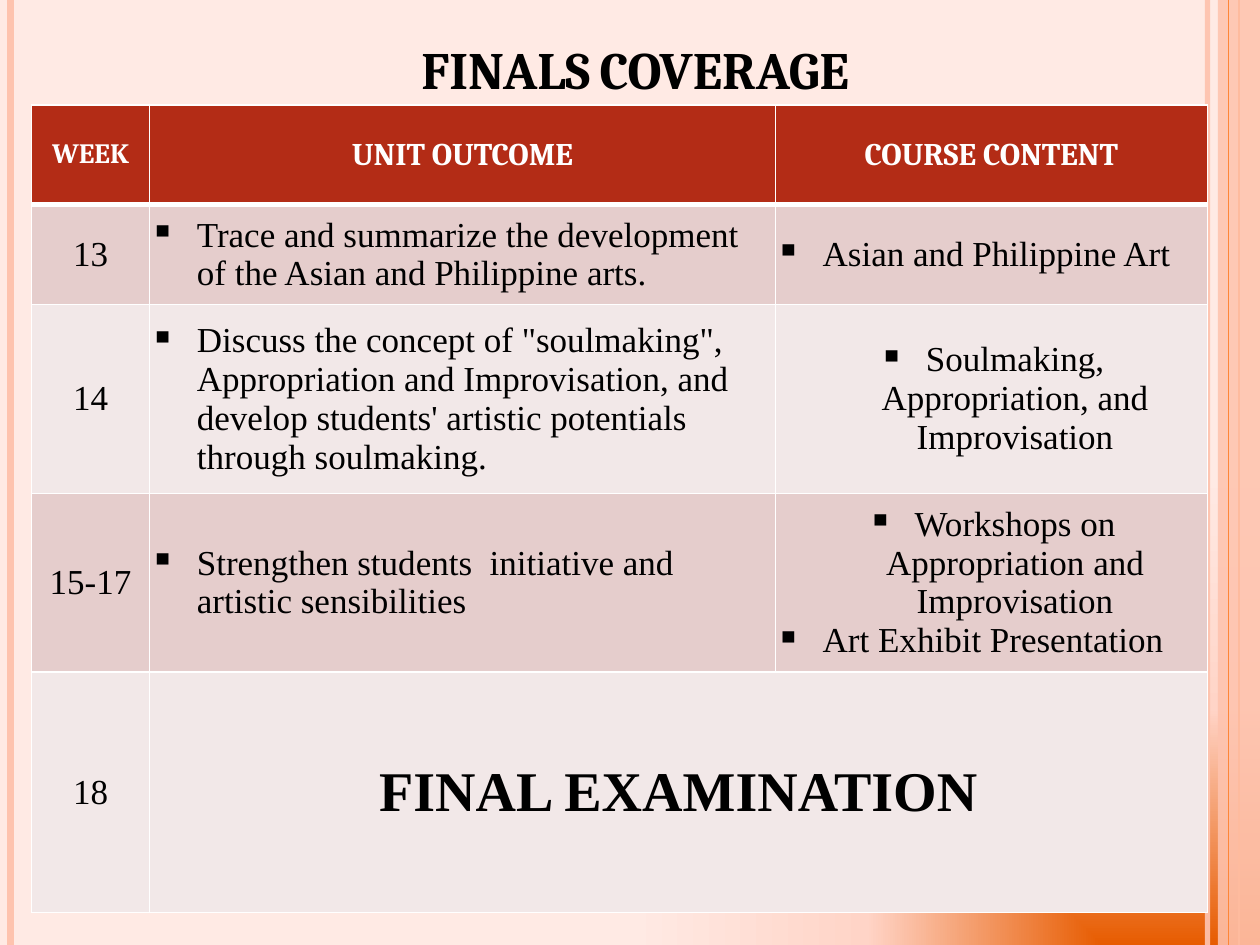
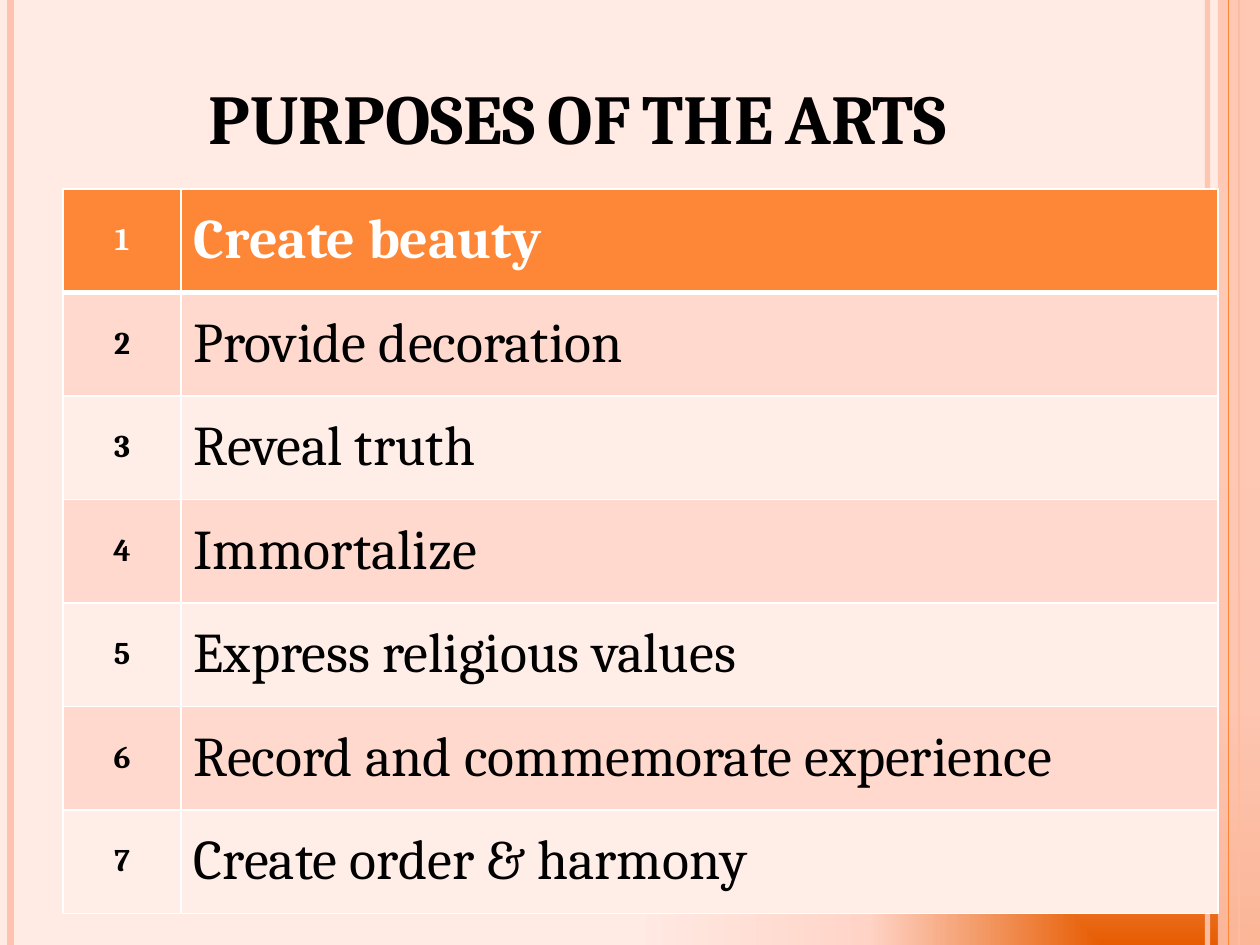
from dataclasses import dataclass

import lxml.etree
import pptx
import pptx.dml.color
import pptx.enum.shapes
import pptx.enum.text
import pptx.oxml
import pptx.oxml.ns
import pptx.util

WIDE, HIGH = pptx.util.Inches(10), pptx.util.Inches(7.5)
COLS, ROWS = 120, 90
PEACH, ORANGE, BRICK = "FEC3AE", "FE8637", "B32C16"
WHITE, BLACK = "FFFFFF", "000000"
HEAD, BODY = "Cambria", "Times New Roman"
GLOW = ((0, "E75C01"), (50, "FFD4C7"), (100, "FFEAE4"))
MID = pptx.enum.text.PP_ALIGN.CENTER
LEFT = pptx.enum.text.PP_ALIGN.LEFT


@dataclass(frozen=True)
class Box:
    col: float
    row: float
    wide: float
    high: float

    def place(self) -> tuple[int, int, int, int]:
        return across(self.col), down(self.row), across(self.wide), down(self.high)


@dataclass(frozen=True)
class Stripe:
    col: float
    hue: str
    weight: float
    alpha: int = 100


@dataclass(frozen=True)
class Line:
    text: str
    size: float
    font: str = HEAD
    hue: str = BLACK
    bold: bool = False
    align: int = MID
    mark: bool = False


@dataclass(frozen=True)
class Cell:
    lines: tuple[Line, ...]
    fill: str
    inset: bool = True
    span: int = 1


@dataclass(frozen=True)
class Grid:
    box: Box
    cols: tuple[float, ...]
    rows: tuple[float, ...]
    cells: list[list[Cell]]


BACK = (Stripe(115, PEACH, 3, 93), Stripe(1, PEACH, 4.5), Stripe(118, ORANGE, 1.5))
FRONT = (Stripe(117, ORANGE, 0.75),)
BAND = Box(116, 0, 4, ROWS)


def across(cols: float) -> int:
    return round(WIDE * cols / COLS)


def down(rows: float) -> int:
    return round(HIGH * rows / ROWS)


def paint(hue: str) -> pptx.dml.color.RGBColor:
    return pptx.dml.color.RGBColor.from_string(hue)


def add(root, tag: str, **attrs):
    node = lxml.etree.SubElement(root, pptx.oxml.ns.qn(tag))
    for name, value in attrs.items():
        node.set(name, str(value))
    return node


def fade(shape, alpha: int) -> None:
    if alpha < 100:
        hue = next(shape._element.spPr.iter(pptx.oxml.ns.qn("a:srgbClr")))
        add(hue, "a:alpha", val=alpha * 1000)


def glow(slide) -> None:
    fill = slide.background.fill
    fill.solid()
    old = next(slide._element.iter(pptx.oxml.ns.qn("a:solidFill")))
    root = old.getparent()
    grad = add(root, "a:gradFill", rotWithShape=1)
    root.replace(old, grad)
    stops = add(grad, "a:gsLst")
    for share, hue in GLOW:
        add(add(stops, "a:gs", pos=share * 1000), "a:srgbClr", val=hue)
    add(add(grad, "a:path", path="rect"), "a:fillToRect", l=100000, t=100000)


def rule(slide, stripe: Stripe) -> None:
    edge = across(stripe.col)
    line = slide.shapes.add_connector(
        pptx.enum.shapes.MSO_CONNECTOR.STRAIGHT, edge, 0, edge, HIGH)
    line.line.color.rgb = paint(stripe.hue)
    line.line.width = pptx.util.Pt(stripe.weight)
    fade(line, stripe.alpha)
    add(line._element.spPr, "a:effectLst")


def frame(slide) -> None:
    glow(slide)
    for stripe in BACK:
        rule(slide, stripe)
    band = slide.shapes.add_shape(
        pptx.enum.shapes.MSO_SHAPE.RECTANGLE, *BAND.place())
    band.shadow.inherit = False
    band.fill.solid()
    band.fill.fore_color.rgb = paint(PEACH)
    band.line.fill.background()
    fade(band, 87)
    for stripe in FRONT:
        rule(slide, stripe)


def write(para, line: Line) -> None:
    para.text = line.text
    para.alignment = line.align
    para.font.name = line.font
    para.font.size = pptx.util.Pt(line.size)
    para.font.bold = line.bold
    para.font.color.rgb = paint(line.hue)
    if line.mark:
        props = para._p.get_or_add_pPr()
        dent = across(4.5)
        props.set("marL", str(dent))
        props.set("indent", str(-dent))
        bullet = pptx.oxml.parse_xml(
            f'<a:buChar {pptx.oxml.ns.nsdecls("a")} char="▪"/>')
        props.find(pptx.oxml.ns.qn("a:defRPr")).addprevious(bullet)


def title(slide, text: str, size: float, box: Box) -> None:
    frame = slide.shapes.add_textbox(*box.place()).text_frame
    frame.word_wrap = True
    frame.vertical_anchor = pptx.enum.text.MSO_ANCHOR.MIDDLE
    para = frame.paragraphs[0]
    write(para, Line(text, size, bold=True))
    para.runs[0]._r.get_or_add_rPr().set("cap", "small")


def edge(cell, top: float, base: float) -> None:
    props = cell._tc.get_or_add_tcPr()
    for side, weight in zip("LRTB", (1, 1, top, base)):
        line = add(props, f"a:ln{side}", w=pptx.util.Pt(weight))
        add(add(line, "a:solidFill"), "a:srgbClr", val=WHITE)


def fill(cell, data: Cell) -> None:
    cell.fill.solid()
    cell.fill.fore_color.rgb = paint(data.fill)
    cell.vertical_anchor = pptx.enum.text.MSO_ANCHOR.MIDDLE
    if not data.inset:
        cell.margin_left = cell.margin_right = 0
        cell.margin_top = cell.margin_bottom = 0
    text = cell.text_frame
    for spot, line in enumerate(data.lines):
        write(text.add_paragraph() if spot else text.paragraphs[0], line)


def chart(slide, grid: Grid) -> None:
    table = slide.shapes.add_table(
        len(grid.rows), len(grid.cols), *grid.box.place()).table
    table.first_row = table.horz_banding = False
    for col, wide in zip(table.columns, grid.cols):
        col.width = across(wide)
    for row, high in zip(table.rows, grid.rows):
        row.height = down(high)
    for r, row in enumerate(grid.cells):
        for c in range(len(grid.cols)):
            edge(table.cell(r, c), 3 if r == 1 else 1, 3 if r == 0 else 1)
        for c, data in enumerate(row):
            cell = table.cell(r, c)
            if data.span > 1:
                cell.merge(table.cell(r, c + data.span - 1))
            fill(cell, data)


def plan() -> Grid:
    def week(text: str) -> Line:
        return Line(text, 20, BODY)

    def point(text: str, align: int = LEFT) -> Line:
        return Line(text, 20, BODY, align=align, mark=True)

    heads = (("WEEK", 16), ("UNIT OUTCOME", 18), ("COURSE CONTENT", 18))
    cells = [[Cell((Line(text, size, hue=WHITE, bold=True),), BRICK)
              for text, size in heads]]
    weeks = (
        ("13", "Trace and summarize the development of the Asian and Philippine arts.",
         (point("Asian and Philippine Art"),)),
        ("14", "Discuss the concept of \"soulmaking\", Appropriation and Improvisation, "
         "and develop students' artistic potentials through soulmaking.",
         (point("Soulmaking, Appropriation, and Improvisation", MID),)),
        ("15-17", "Strengthen students  initiative and artistic sensibilities",
         (point("Workshops on Appropriation and Improvisation", MID),
          point("Art Exhibit Presentation"))),
    )
    tints = ("E5CDCC", "F2E8E8")
    for spot, (name, goal, topics) in enumerate(weeks):
        cells.append([Cell(lines, tints[spot % 2], False)
                      for lines in ((week(name),), (point(goal),), topics)])
    exam = Line("FINAL EXAMINATION", 32, BODY, bold=True)
    cells.append([Cell((week("18"),), tints[1], False),
                  Cell((exam,), tints[1], False, 2)])
    return Grid(Box(3, 10, 112, 76.9), (11.25, 59.6, 41.15),
                (9.5, 9.5, 18, 17, 22.9), cells)


def aims() -> Grid:
    names = ("Create beauty", "Provide decoration", "Reveal truth", "Immortalize",
             "Express religious values", "Record and commemorate experience",
             "Create order & harmony")
    tints = ("FFEDE8", "FFD9CE")
    cells = []
    for spot, name in enumerate(names):
        top = spot == 0
        tint, hue = (ORANGE, WHITE) if top else (tints[spot % 2], BLACK)
        cells.append([
            Cell((Line(str(spot + 1), 18, hue=hue, bold=True),), tint),
            Cell((Line(name, 32, hue=hue, bold=top, align=LEFT),), tint)])
    box = Box(6, 18, 110, 69)
    return Grid(box, (11.25, 98.75), (box.high / len(names),) * len(names), cells)


def main() -> None:
    deck = pptx.Presentation()
    deck.slide_width, deck.slide_height = WIDE, HIGH
    pages = (
        ("FINALS COVERAGE", 30, Box(6, 2, 109, 9), plan()),
        ("PURPOSES OF THE ARTS", 40, Box(6, 3.6, 98, 15), aims()),
    )
    for text, size, box, grid in pages:
        slide = deck.slides.add_slide(deck.slide_layouts[6])
        frame(slide)
        title(slide, text, size, box)
        chart(slide, grid)
    deck.save("out.pptx")


if __name__ == "__main__":
    main()
